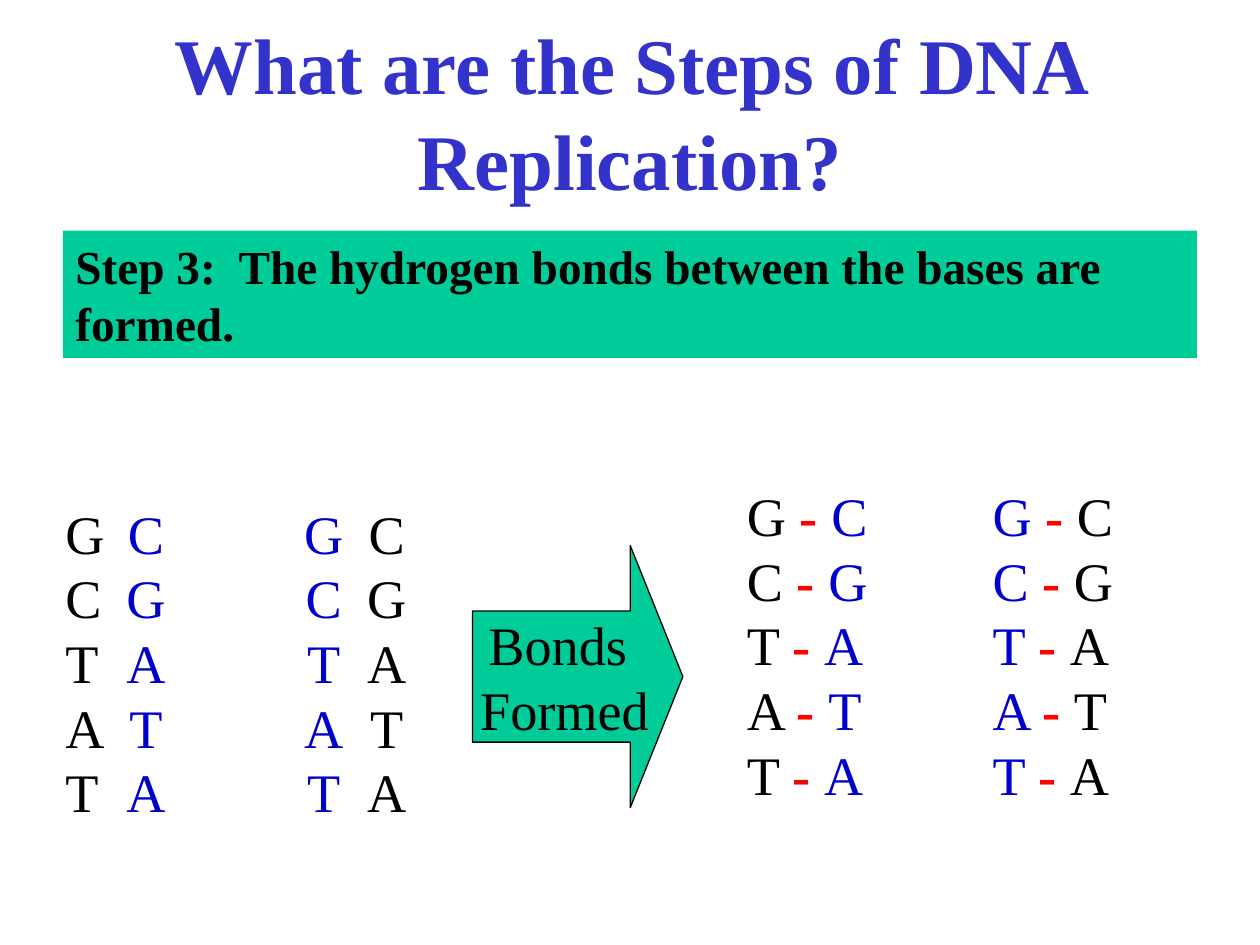
from dataclasses import dataclass

from lxml import etree
from pptx import Presentation
from pptx.dml.color import RGBColor
from pptx.enum import shapes, text
from pptx.oxml import ns
from pptx.util import Inches, Pt

FONT = "Times New Roman"
BLACK, BLUE, RED, GREEN = "000000", "0000CC", "FF0000", "00CC99"
TITLE = "3333CC"
LEFT, MID = text.PP_ALIGN.LEFT, text.PP_ALIGN.CENTER
PAIRS = ["GC", "CG", "TA", "AT", "TA"]


@dataclass
class Run:
    text: str
    color: str = BLACK
    bold: bool = False


@dataclass
class Style:
    size: float
    lead: float
    align: text.PP_ALIGN = LEFT
    tabs: tuple = ()
    tab_kind: str = "l"


def rgb(color: str) -> RGBColor:
    return RGBColor.from_string(color)


def place(shape, left: float, top: float, width: float, height: float) -> None:
    shape.left, shape.top = Inches(left), Inches(top)
    shape.width, shape.height = Inches(width), Inches(height)


def add_tabs(para, style: Style) -> None:
    stops = etree.SubElement(para._p.get_or_add_pPr(), ns.qn("a:tabLst"))
    for pos in style.tabs:
        etree.SubElement(stops, ns.qn("a:tab"),
                         pos=str(Inches(pos)), algn=style.tab_kind)


def write(shape, rows: list[list[Run]], style: Style, anchor, wrap=True) -> None:
    frame = shape.text_frame
    frame.word_wrap = wrap
    frame.auto_size = text.MSO_AUTO_SIZE.NONE
    frame.vertical_anchor = anchor
    for i, row in enumerate(rows):
        para = frame.add_paragraph() if i else frame.paragraphs[0]
        if style.tabs:
            add_tabs(para, style)
        para.alignment = style.align
        para.line_spacing = Pt(style.lead)
        para.space_before = Pt(0)
        for part in row:
            run = para.add_run()
            run.text = part.text
            font = run.font
            font.name, font.size, font.bold = FONT, Pt(style.size), part.bold
            font.color.rgb = rgb(part.color)


def add_block(slide, kind, box: tuple, line: str | None = None):
    """Add a green preset shape, outlined if a line colour is given."""
    shape = slide.shapes.add_shape(kind, *map(Inches, box))
    shape.shadow.inherit = False
    shape.fill.solid()
    shape.fill.fore_color.rgb = rgb(GREEN)
    if line:
        shape.line.color.rgb = rgb(line)
        shape.line.width = Pt(0.75)
    else:
        shape.line.fill.background()
    return shape


def loose(pair: str) -> list[Run]:
    """Two strands side by side, not yet bonded."""
    old, new = pair
    return [Run(f"{old}\t"), Run(f"{new}\t{old}\t", BLUE), Run(new)]


def bonded(pair: str) -> list[Run]:
    old, new = pair
    bond = Run("- ", RED, True)
    return [Run(f"{old} "), bond, Run(f"{new}\t{old} ", BLUE), bond, Run(new)]


def main() -> None:
    deck = Presentation()
    deck.slide_width, deck.slide_height = Inches(10), Inches(7.5)
    slide = deck.slides.add_slide(deck.slide_layouts[5])
    top, middle = text.MSO_ANCHOR.TOP, text.MSO_ANCHOR.MIDDLE

    title = slide.shapes.title
    place(title, 0.75, 0.25, 8.5, 1.25)
    write(title, [[Run("What are the Steps of DNA Replication?", TITLE, True)]],
          Style(45, 55, MID), middle)

    step = add_block(slide, shapes.MSO_SHAPE.RECTANGLE, (0.5, 1.83, 9, 1.01))
    words = "Step 3:  The hydrogen bonds between the bases are formed."
    write(step, [[Run(words, bold=True)]], Style(27, 32.5), top)

    before = slide.shapes.add_textbox(*map(Inches, (0.42, 3.92, 3.58, 2.71)))
    write(before, [loose(pair) for pair in PAIRS],
          Style(31, 37, tabs=(0.64, 2.05, 2.55), tab_kind="ctr"), top)

    arrow = add_block(slide, shapes.MSO_SHAPE.RIGHT_ARROW,
                      (3.75, 4.33, 1.67, 2.08), BLACK)
    arrow.adjustments[0], arrow.adjustments[1] = 0.5, 0.25
    write(arrow, [[Run("Bonds ")], [Run("Formed")]],
          Style(31, 37, MID), middle, wrap=False)

    after = slide.shapes.add_textbox(*map(Inches, (5.83, 3.78, 3.11, 2.71)))
    write(after, [bonded(pair) for pair in PAIRS],
          Style(31, 37, tabs=(1.95,)), top)

    deck.save("out.pptx")


if __name__ == "__main__":
    main()
